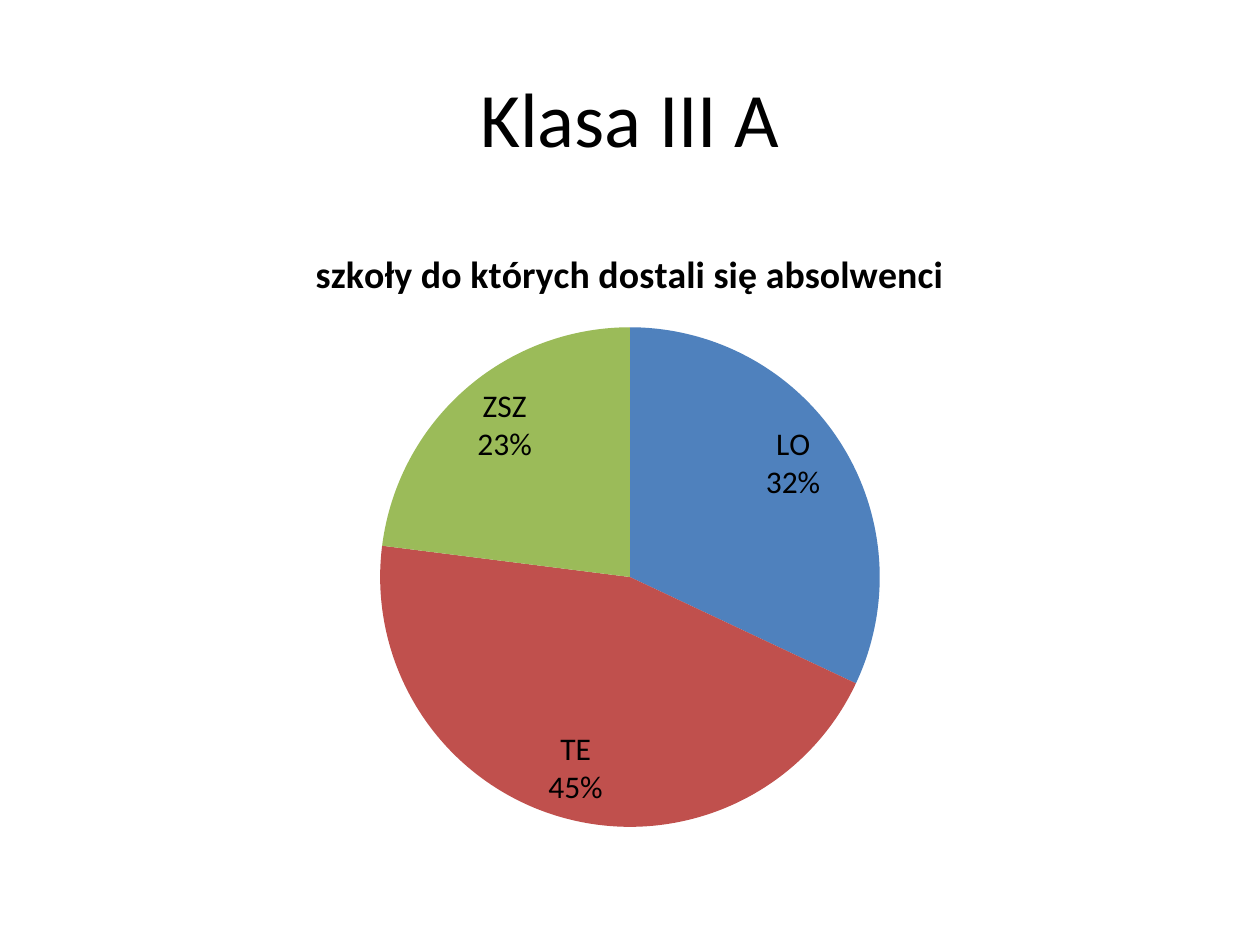
from lxml.etree import SubElement
from pptx import Presentation
from pptx.chart.data import CategoryChartData
from pptx.dml.color import RGBColor
from pptx.enum.chart import XL_CHART_TYPE, XL_LABEL_POSITION
from pptx.enum.text import MSO_ANCHOR, PP_ALIGN
from pptx.oxml.ns import qn
from pptx.util import Cm, Pt


def color(value):
    return RGBColor.from_string(value)


class SlideBuilder:
    """Hold the style and the current slide, and add its elements."""

    font_name = "Calibri"
    text_color = "000000"

    def __init__(self, slide):
        self.slide = slide
        slide.background.fill.solid()
        slide.background.fill.fore_color.rgb = color("FFFFFF")

    def style_font(self, font, size, bold=False):
        font.name = self.font_name
        font.size = Pt(size)
        font.bold = bold
        font.color.rgb = color(self.text_color)

    def add_run(self, paragraph, text, size, bold=False):
        run = paragraph.add_run()
        run.text = text
        self.style_font(run.font, size, bold)

    def add_heading(self, text, left, top, width, height):
        shape = self.slide.shapes.add_textbox(Cm(left), Cm(top), Cm(width), Cm(height))
        frame = shape.text_frame
        frame.word_wrap = True
        frame.vertical_anchor = MSO_ANCHOR.MIDDLE
        paragraph = frame.paragraphs[0]
        paragraph.alignment = PP_ALIGN.CENTER
        self.add_run(paragraph, text, 44)

    def add_pie(self, title, slices, left, top, width, height):
        data = CategoryChartData()
        data.categories = [name for name, _, _ in slices]
        data.add_series(title, [value for _, value, _ in slices])
        chart = self.slide.shapes.add_chart(
            XL_CHART_TYPE.PIE, Cm(left), Cm(top), Cm(width), Cm(height), data
        ).chart
        self.style_font(chart.font, 18)
        chart.has_legend = False
        chart.has_title = True
        self.add_run(chart.chart_title.text_frame.paragraphs[0], title, 21.6, True)
        chart.chart_title.include_in_layout = False
        plot = chart.plots[0]
        plot.vary_by_categories = True
        for index, (_, _, fill_color) in enumerate(slices):
            fill = plot.series[0].points[index].format.fill
            fill.solid()
            fill.fore_color.rgb = color(fill_color)
        self.add_labels(plot)

    def add_labels(self, plot):
        plot.has_data_labels = True
        labels = plot.data_labels
        self.style_font(labels.font, 18)
        labels.show_category_name = True
        labels.show_percentage = True
        labels.show_value = False
        labels.position = XL_LABEL_POSITION.BEST_FIT
        element = labels._element
        separator = SubElement(element, qn("c:separator"))
        separator.text = "\n"
        element.find(qn("c:showBubbleSize")).addnext(separator)


def main():
    presentation = Presentation()
    presentation.slide_width = Cm(25.4)
    presentation.slide_height = Cm(19.05)
    builder = SlideBuilder(presentation.slides.add_slide(presentation.slide_layouts[6]))
    builder.add_heading("Klasa III A", 1.27, 0.76, 22.86, 3.18)
    slices = [
        ("LO", 32, "4F81BD"),
        ("TE", 45, "C0504D"),
        ("ZSZ", 23, "9BBB59"),
    ]
    builder.add_pie("szkoły do których dostali się absolwenci", slices, 1.27, 4.45, 22.86, 12.57)
    presentation.save("out.pptx")


if __name__ == "__main__":
    main()
